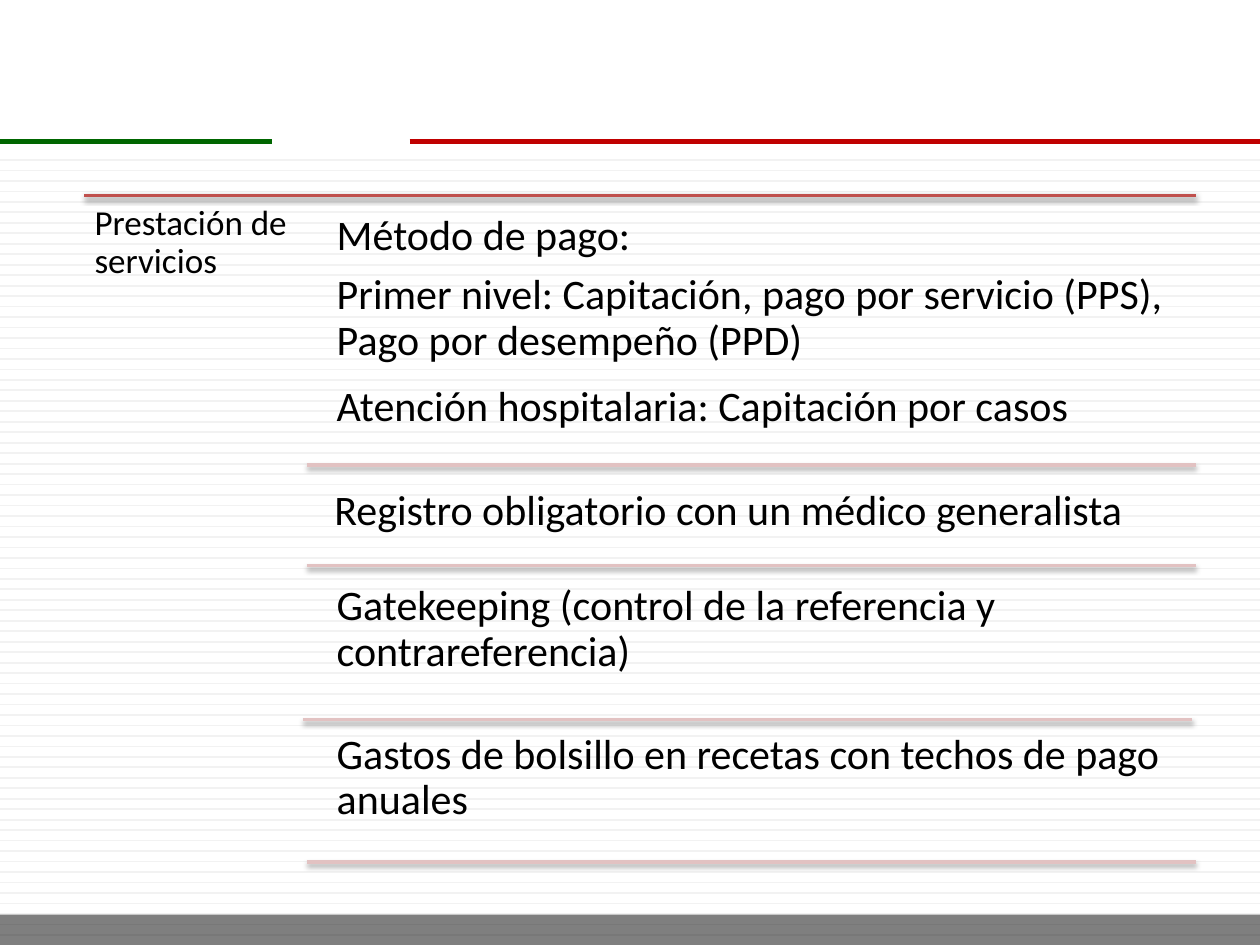
from dataclasses import dataclass

from lxml import etree
from pptx import Presentation
from pptx import util as u
from pptx.dml import color
from pptx.enum import shapes, text
from pptx.oxml import ns


@dataclass(frozen=True)
class Theme:
    font: str = "Calibri"
    ink: str = "000000"
    stripe: str = "F2F2F2"
    green: str = "006600"
    red: str = "C00000"
    rule: str = "C0504D"
    pale: str = "E2C2C2"
    label: int = 20
    body: int = 24


T = Theme()
WIDE, HIGH = 10, 7.5


def rgb(code):
    return color.RGBColor.from_string(code)


def node(up, tag, **attrs):
    return etree.SubElement(up, ns.qn(tag), {k: str(v) for k, v in attrs.items()})


def rule(slide, left, right, y, tint, size, shade=False):
    """Draw a level line, with a soft shadow below it if asked."""
    ends = [u.Inches(n) for n in (left, y, right, y)]
    line = slide.shapes.add_connector(shapes.MSO_CONNECTOR.STRAIGHT, *ends)
    line.line.color.rgb = rgb(tint)
    line.line.width = u.Pt(size)
    fx = node(line._element.spPr, "a:effectLst")
    if shade:
        drop = node(fx, "a:outerShdw", blurRad=u.Pt(3.1), dist=u.Pt(1.6),
                    dir=90 * 60000, rotWithShape=0)
        node(node(drop, "a:srgbClr", val=T.ink), "a:alpha", val=38000)


def write(slide, box, lines, size, inset):
    """Place a top-anchored text box; each line is (words, space before)."""
    frame = slide.shapes.add_textbox(*[u.Inches(n) for n in box]).text_frame
    frame.word_wrap = True
    frame.vertical_anchor = text.MSO_ANCHOR.TOP
    frame.margin_left = frame.margin_right = u.Inches(inset)
    frame.margin_top = frame.margin_bottom = u.Inches(inset)
    for i, (words, gap) in enumerate(lines):
        para = frame.add_paragraph() if i else frame.paragraphs[0]
        para.text = words
        para.line_spacing = 0.9
        para.space_before = u.Pt(gap)
        para.font.name = T.font
        para.font.size = u.Pt(size)
        para.font.color.rgb = rgb(T.ink)


def backdrop(slide, box):
    """Striped ground, grey foot band and the two-colour head rule."""
    left, top, wide, high = box
    right, base = left + wide, top + high

    # Stripes at an equal pitch
    first, last, count = top + 1.27, base - 0.08, 75
    pitch = (last - first) / (count - 1)
    for i in range(count):
        rule(slide, left, right, first + i * pitch, T.stripe, 1)

    # Foot band
    foot = 0.24
    spot = [u.Inches(n) for n in (left, base - foot, wide, foot)]
    band = slide.shapes.add_shape(shapes.MSO_SHAPE.RECTANGLE, *spot)
    band.shadow.inherit = False
    band.fill.solid()
    band.fill.fore_color.rgb = rgb(T.ink)
    tint = band._element.spPr.find(".//" + ns.qn("a:srgbClr"))
    node(tint, "a:alpha", val=50000)
    band.line.fill.background()

    # Head rule
    y = top + 0.15 * high
    rule(slide, left, left + 0.216 * wide, y, T.green, 3)
    rule(slide, left + 0.325 * wide, right, y, T.red, 3)


def topics(slide, box, label, rows):
    """Label column beside rows of text, each closed by a pale rule.

    A row is (lines, text top, inset, rule place, rule shift), down from the top.
    """
    left, top, wide, high = box
    col = 0.2 * wide
    body = left + col + 0.14
    rule(slide, left, left + wide, top, T.rule, 2, True)
    write(slide, (left, top, col, high), [(label, 0)], T.label, 0.08)
    for lines, start, inset, end, shift in rows:
        spot = (body, top + start, left + wide - body, end - start)
        write(slide, spot, lines, T.body, inset)
        rule(slide, left + col + shift, left + wide + shift, top + end,
             T.pale, 2, True)


def main():
    deck = Presentation()
    deck.slide_width, deck.slide_height = u.Inches(WIDE), u.Inches(HIGH)
    slide = deck.slides.add_slide(deck.slide_layouts[6])

    backdrop(slide, (0, 0, WIDE, HIGH))
    pay = [
        ("Método de pago:", 0),
        ("Primer nivel: Capitación, pago por servicio (PPS), "
         "Pago por desempeño (PPD)", 8),
        ("Atención hospitalaria: Capitación por casos", 12),
    ]
    rows = [
        (pay, 0.05, 0.1, 2.14, 0),
        ([("Registro obligatorio con un médico generalista", 0)],
         2.25, 0.08, 2.94, 0),
        ([("Gatekeeping (control de la referencia y contrareferencia)", 0)],
         2.99, 0.1, 4.16, -0.03),
        ([("Gastos de bolsillo en recetas con techos de pago anuales", 0)],
         4.17, 0.1, 5.29, 0),
    ]
    topics(slide, (0.67, 1.55, 8.82, 5.35), "Prestación de servicios", rows)
    deck.save("out.pptx")


if __name__ == "__main__":
    main()
